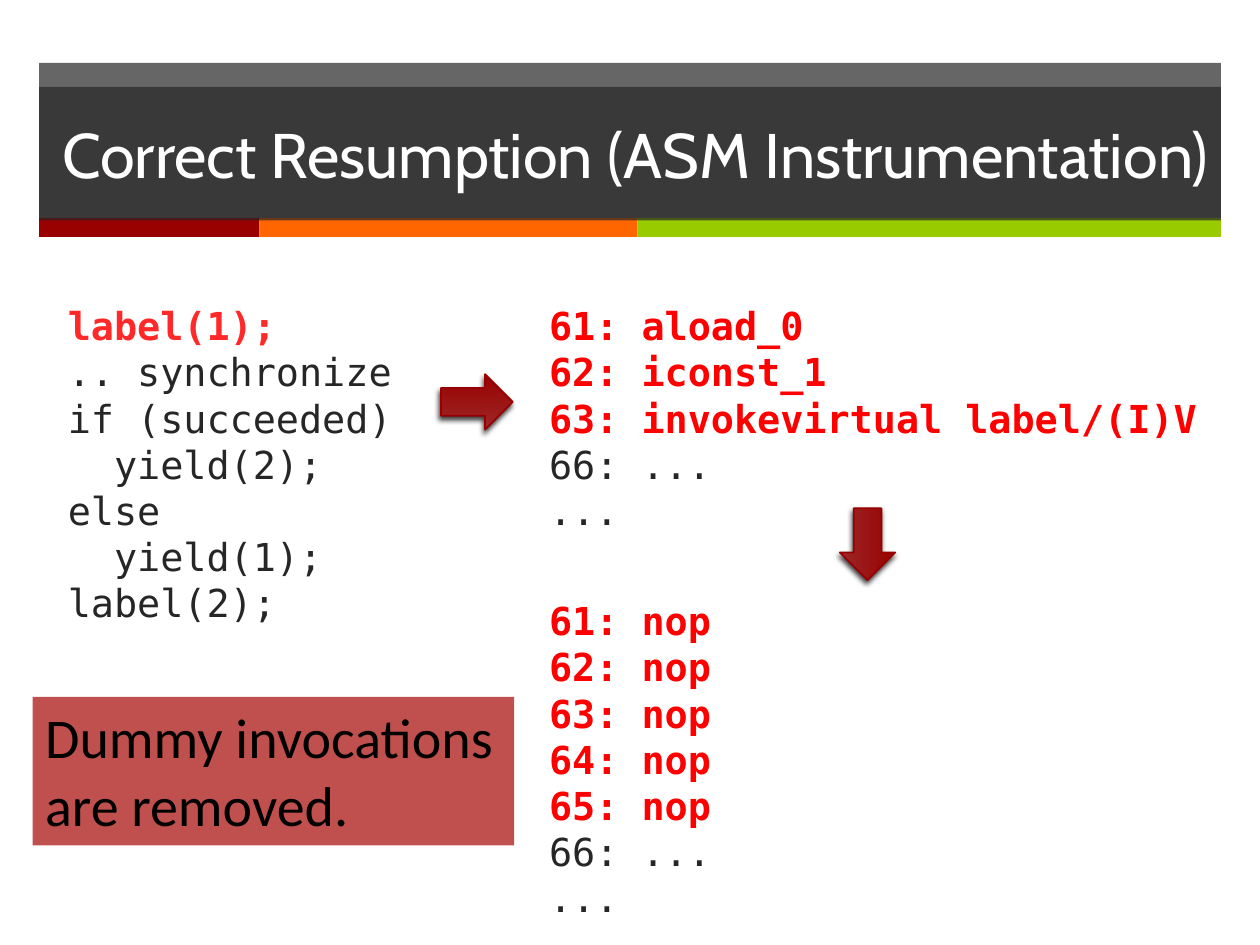
from dataclasses import dataclass

from lxml.etree import SubElement
from pptx import Presentation
from pptx.dml.color import RGBColor
from pptx.enum.shapes import MSO_SHAPE as Preset
from pptx.enum.text import MSO_ANCHOR as Anchor, PP_ALIGN as Align
from pptx.oxml.ns import qn
from pptx.util import Inches, Pt

COLORS = {
    "white": "FFFFFF", "black": "000000", "charcoal": "262626",
    "maroon": "990000", "orange": "FF6600", "green": "99CC00",
    "label": "FF2929", "red": "FF0000", "brick": "C0504D",
    "arrow_light": "9D2828", "arrow_edge": "960000",
}


@dataclass
class Area:
    left: float
    top: float
    width: float
    height: float

    def lengths(self) -> list:
        return [Inches(n) for n in (self.left, self.top, self.width, self.height)]


@dataclass
class Style:
    font: str
    size: int
    color: str
    bold: bool = False


@dataclass
class Listing:
    area: Area
    marked: list[str]
    plain: list[str]
    accent: str = "red"


@dataclass
class Arrow:
    area: Area
    rotation: int = 0


LISTINGS = [
    Listing(Area(0.44, 2.35, 3.08, 4.35), ["label(1);"],
            [".. synchronize", "if (succeeded)", "  yield(2);", "else",
             "  yield(1);", "label(2);"], "label"),
    Listing(Area(4.26, 2.35, 5.74, 2.02),
            ["61: aload_0", "62: iconst_1", "63: invokevirtual label/(I)V"],
            ["66: ...", "..."]),
    Listing(Area(4.26, 4.69, 5.74, 2.81),
            [f"{offset}: nop" for offset in range(61, 66)], ["66: ...", "..."]),
]
ARROWS = [Arrow(Area(3.5, 2.97, 0.57, 0.44)), Arrow(Area(6.6, 4.1, 0.57, 0.44), 90)]
STRIPES = [("maroon", 1.75), ("orange", 3), ("green", 4.63)]


def rgb(name: str) -> RGBColor:
    """Look up a named colour."""
    return RGBColor.from_string(COLORS[name])


def add_block(page, area: Area, color: str, opacity: int = 100):
    """Draw a plain filled rectangle."""
    box = page.shapes.add_shape(Preset.RECTANGLE, *area.lengths())
    box.shadow.inherit = False
    box.line.fill.background()
    box.fill.solid()
    box.fill.fore_color.rgb = rgb(color)
    if opacity < 100:
        tint = box._element.spPr.find(f"{qn('a:solidFill')}/{qn('a:srgbClr')}")
        SubElement(tint, qn("a:alpha"), val=str(opacity * 1000))
    return box


def add_lines(para, lines: list[str], style: Style) -> None:
    """Add lines of one style, separated by line breaks."""
    for index, line in enumerate(lines):
        if index:
            para.add_line_break()
        span = para.add_run()
        span.text = line
        span.font.name = style.font
        span.font.size = Pt(style.size)
        span.font.bold = style.bold
        span.font.color.rgb = rgb(style.color)


def add_listing(page, listing: Listing) -> None:
    """Draw code with its marked lines first."""
    frame = page.shapes.add_textbox(*listing.area.lengths()).text_frame
    frame.word_wrap = True
    para = frame.paragraphs[0]
    para.space_before = Pt(20)
    mono = "DejaVu Sans Mono"
    add_lines(para, listing.marked, Style(mono, 22, listing.accent, True))
    para.add_line_break()
    add_lines(para, listing.plain, Style(mono, 22, "charcoal"))


def add_arrow(page, arrow: Arrow) -> None:
    """Draw a shaded block arrow with a soft shadow."""
    shape = page.shapes.add_shape(Preset.RIGHT_ARROW, *arrow.area.lengths())
    shape.rotation = arrow.rotation
    shape.fill.gradient()
    shape.fill.gradient_angle = 90
    for stop, color in zip(shape.fill.gradient_stops, ("arrow_light", "maroon")):
        stop.color.rgb = rgb(color)
    shape.line.color.rgb = rgb("arrow_edge")
    shape.line.width = Pt(1)
    shape.shadow.inherit = False
    effects = shape._element.spPr.find(qn("a:effectLst"))
    shadow = SubElement(effects, qn("a:outerShdw"), blurRad=str(Pt(3)),
                        dist=str(Pt(2)), dir=str(110 * 60000), rotWithShape="0")
    tint = SubElement(shadow, qn("a:srgbClr"), val=COLORS["black"])
    SubElement(tint, qn("a:alpha"), val="75000")


def add_header(page) -> None:
    """Draw the title band and the stripes below it."""
    add_block(page, Area(0.31, 0.5, 9.38, 1.24), "charcoal", 70)
    left = 0.31
    for color, width in STRIPES:
        add_block(page, Area(left, 1.73, width, 0.15), color)
        left += width
    title = add_block(page, Area(0.31, 0.69, 9.38, 1.06), "charcoal", 70)
    title.text_frame.word_wrap = True
    title.text_frame.vertical_anchor = Anchor.MIDDLE
    para = title.text_frame.paragraphs[0]
    para.alignment = Align.RIGHT
    add_lines(para, ["Correct Resumption (ASM Instrumentation)"],
              Style("Cabin", 36, "white"))


def add_callout(page) -> None:
    """Draw the concluding remark."""
    box = add_block(page, Area(0.26, 5.53, 3.82, 1.18), "brick")
    box.text_frame.word_wrap = False
    box.text_frame.vertical_anchor = Anchor.TOP
    para = box.text_frame.paragraphs[0]
    para.alignment = Align.LEFT
    add_lines(para, ["Dummy invocations", "are removed."],
              Style("Calibri", 32, "black"))


def main() -> None:
    """Build and save the deck."""
    deck = Presentation()
    deck.slide_width, deck.slide_height = Inches(10), Inches(7.5)
    page = deck.slides.add_slide(deck.slide_layouts[6])
    add_header(page)
    for listing in LISTINGS:
        add_listing(page, listing)
    for arrow in ARROWS:
        add_arrow(page, arrow)
    add_callout(page)
    deck.save("out.pptx")


if __name__ == "__main__":
    main()
